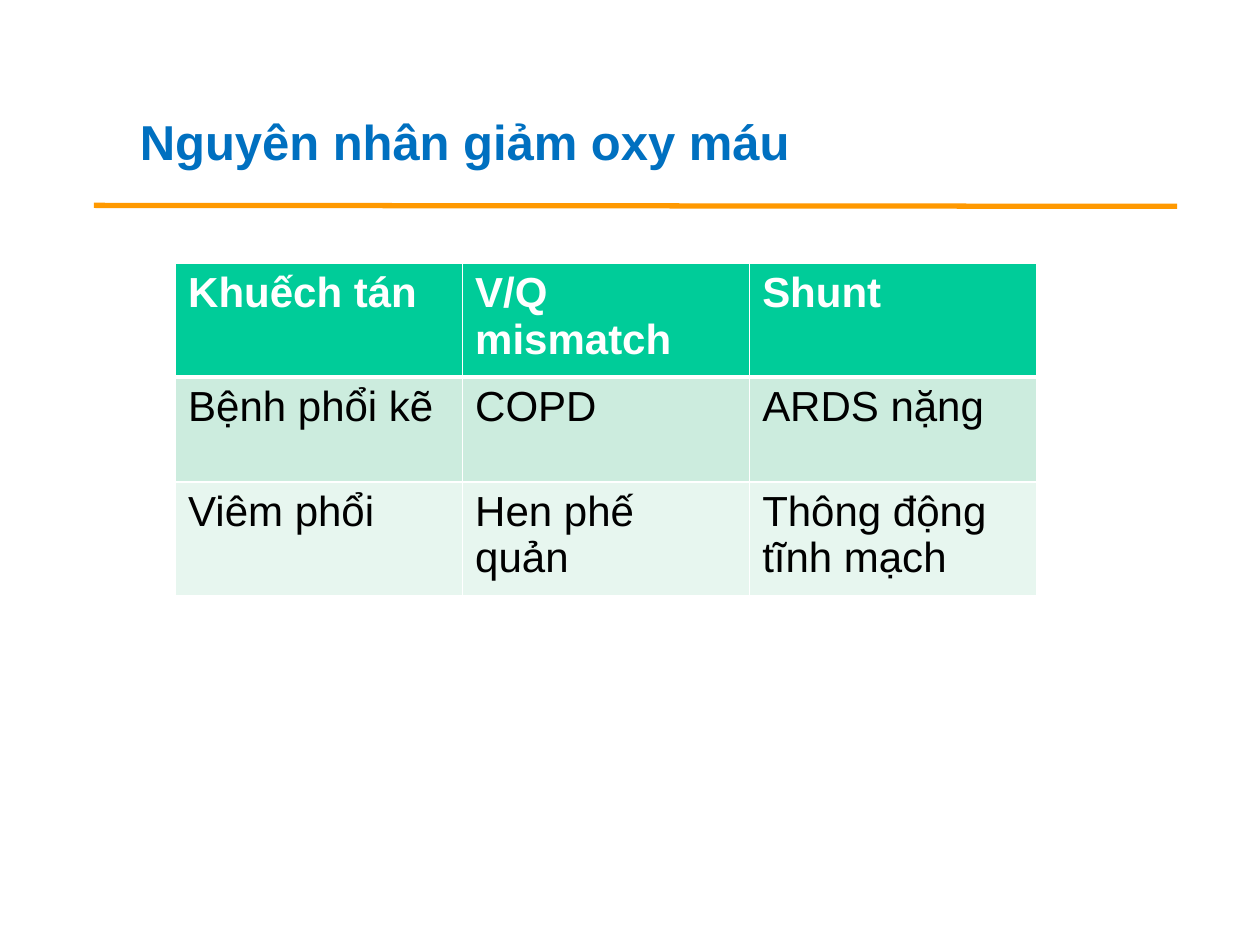
from lxml.etree import SubElement
from pptx import Presentation
from pptx.dml.color import RGBColor
from pptx.enum.shapes import MSO_CONNECTOR as Connector
from pptx.enum.text import MSO_ANCHOR as Anchor
from pptx.oxml.ns import qn
from pptx.util import Cm, Pt

ORANGE = RGBColor(0xFF, 0x99, 0x00)
BLUE = RGBColor(0x00, 0x70, 0xC0)
GREEN = RGBColor(0x00, 0xCC, 0x99)
MINT = RGBColor(0xCC, 0xEC, 0xDE)
PALE_MINT = RGBColor(0xE7, 0xF6, 0xEF)
WHITE = RGBColor(0xFF, 0xFF, 0xFF)
BLACK = RGBColor(0x00, 0x00, 0x00)

CAUSES = [
    ["Khuếch tán", "V/Q mismatch", "Shunt"],
    ["Bệnh phổi kẽ", "COPD", "ARDS nặng"],
    ["Viêm phổi", "Hen phế quản", "Thông động tĩnh mạch"],
]
ROW_FILLS = [GREEN, MINT, PALE_MINT]


def add_run(paragraph, text, size, color, bold):
    run = paragraph.add_run()
    run.text = text
    run.font.name = "Arial"
    run.font.size = Pt(size)
    run.font.bold = bold
    run.font.color.rgb = color


def add_title(slide, left, top, width, height):
    frame = slide.shapes.add_textbox(Cm(left), Cm(top), Cm(width), Cm(height)).text_frame
    frame.word_wrap = True
    frame.vertical_anchor = Anchor.MIDDLE
    add_run(frame.paragraphs[0], "Nguyên nhân giảm oxy máu", 28, BLUE, True)


def add_rule(slide, left, top, width, height):
    rule = slide.shapes.add_connector(
        Connector.STRAIGHT, Cm(left), Cm(top), Cm(left + width), Cm(top + height))
    rule.line.color.rgb = ORANGE
    rule.line.width = Pt(3)
    SubElement(rule._element.spPr, qn("a:effectLst"))


def set_borders(cell, widths):
    properties = cell._tc.get_or_add_tcPr()
    for side, width in widths.items():
        line = SubElement(properties, qn(f"a:ln{side}"), w=str(Pt(width)))
        fill = SubElement(line, qn("a:solidFill"))
        SubElement(fill, qn("a:srgbClr"), val=str(WHITE))


def add_causes_table(slide, left, top, width, height):
    table = slide.shapes.add_table(
        len(CAUSES), len(CAUSES[0]), Cm(left), Cm(top), Cm(width), Cm(height)).table
    for row, (texts, color) in enumerate(zip(CAUSES, ROW_FILLS)):
        header = row == 0
        for column, text in enumerate(texts):
            cell = table.cell(row, column)
            set_borders(cell, {"L": 1, "R": 1, "T": 3 if row == 1 else 1, "B": 3 if header else 1})
            cell.fill.solid()
            cell.fill.fore_color.rgb = color
            add_run(cell.text_frame.paragraphs[0], text, 24, WHITE if header else BLACK, header)


def main():
    presentation = Presentation()
    presentation.slide_width = Cm(25.4)
    presentation.slide_height = Cm(19.05)
    slide = presentation.slides.add_slide(presentation.slide_layouts[6])
    add_rule(slide, 1.89, 4.14, 21.84, 0.02)
    add_title(slide, 2.57, 1.25, 20.02, 3.18)
    add_causes_table(slide, 3.54, 5.31, 17.36, 6.35)
    presentation.save("out.pptx")


if __name__ == "__main__":
    main()
